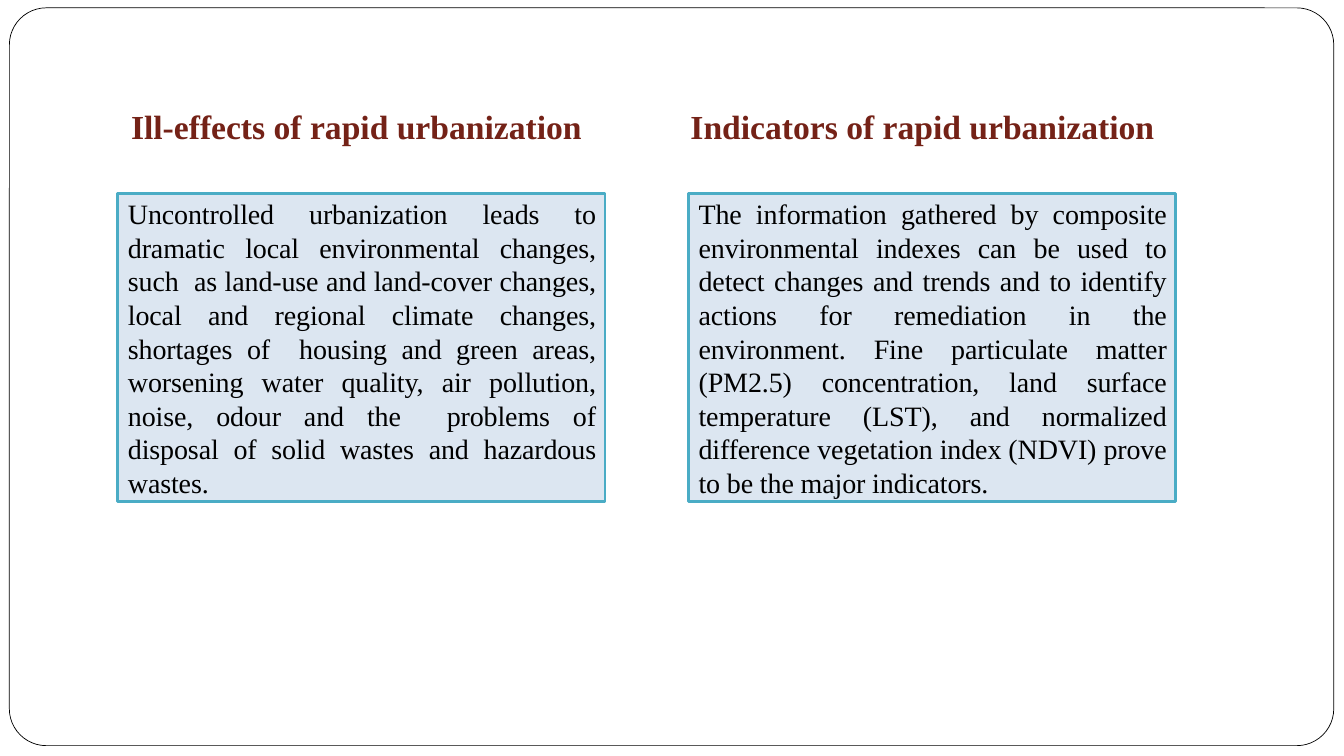
from lxml.etree import SubElement
from pptx import Presentation
from pptx.dml.color import RGBColor
from pptx.enum.shapes import MSO_SHAPE
from pptx.enum.text import MSO_ANCHOR, MSO_AUTO_SIZE, PP_ALIGN
from pptx.oxml.ns import qn
from pptx.util import Pt

COLORS = {
    "paper": "FFFFFF", "frame": "000000", "heading": "742217",
    "text": "000000", "panel": "DCE6F1", "border": "4AACC5",
}
COLORS = {part: RGBColor.from_string(value) for part, value in COLORS.items()}

HEADING = {"name": "Times New Roman", "size": Pt(24), "bold": True}
BODY = {"name": "Times New Roman", "size": Pt(20), "bold": False}
HEADING_FRAME = {"vertical_anchor": MSO_ANCHOR.TOP, "word_wrap": True,
                 "auto_size": MSO_AUTO_SIZE.NONE}
BODY_FRAME = HEADING_FRAME | {"margin_left": Pt(7.2), "margin_right": Pt(6.6),
                              "margin_top": Pt(2.2), "margin_bottom": Pt(0)}
BODY_PARAGRAPH = {"alignment": PP_ALIGN.JUSTIFY, "space_before": Pt(0),
                  "line_spacing": Pt(24)}

# heading placeholder, heading left, heading, body placeholder, body left, body
COLUMNS = [
    (1, 86.4, "Ill-effects of rapid urbanization", 2, 84.2,
     "Uncontrolled urbanization leads to dramatic local environmental changes, "
     "such  as land-use and land-cover changes, local and regional climate "
     "changes, shortages of  housing and green areas, worsening water quality, "
     "air pollution, noise, odour and the  problems of disposal of solid wastes "
     "and hazardous wastes."),
    (3, 486, "Indicators of rapid urbanization", 4, 491.8,
     "The information gathered by composite environmental indexes can be used "
     "to detect changes and trends and to identify actions for remediation in "
     "the environment. Fine particulate matter (PM2.5) concentration, land "
     "surface temperature (LST), and normalized difference vegetation index "
     "(NDVI) prove to be the major indicators."),
]


def set_all(target, values):
    for attribute, value in values.items():
        setattr(target, attribute, value)


def fill_placeholder(index, box, text, frame_format, font_format, color):
    """Place and format a placeholder; return it with its paragraph."""
    holder = slide.placeholders[index]
    holder.left, holder.top, holder.width, holder.height = map(Pt, box)
    set_all(holder.text_frame, frame_format)
    paragraph = holder.text_frame.paragraphs[0]
    run = paragraph.add_run()
    run.text = text
    set_all(run.font, font_format)
    run.font.color.rgb = COLORS[color]
    return holder, paragraph


prs = Presentation()
prs.slide_width, prs.slide_height = Pt(960), Pt(540)
slide = prs.slides.add_slide(prs.slide_layouts.get_by_name("Comparison"))
empty_title = slide.shapes.title.element
empty_title.getparent().remove(empty_title)

border = slide.shapes.add_shape(MSO_SHAPE.ROUNDED_RECTANGLE,
                                Pt(6.7), Pt(5.6), Pt(946), Pt(527))
border.adjustments[0] = 0.05
border.shadow.inherit = False
border.fill.solid()
border.fill.fore_color.rgb = COLORS["paper"]
border.line.color.rgb = COLORS["frame"]
border.line.width = Pt(0.5)
slide.shapes.element.insert(2, border.element)  # behind the text

for heading_index, heading_left, heading, body_index, body_left, body in COLUMNS:
    _, heading_line = fill_placeholder(heading_index, (heading_left, 72, 400, 36),
                                       heading, HEADING_FRAME, HEADING, "heading")
    heading_line.space_before = Pt(0)

    panel, prose = fill_placeholder(body_index, (body_left, 138.2, 348, 220.3),
                                    body, BODY_FRAME, BODY, "text")
    panel.fill.solid()
    panel.fill.fore_color.rgb = COLORS["panel"]
    panel.line.color.rgb = COLORS["border"]
    panel.line.width = Pt(2)

    properties = prose._p.get_or_add_pPr()
    properties.set("marL", "0")
    properties.set("indent", "0")
    SubElement(properties, qn("a:buNone"))
    set_all(prose, BODY_PARAGRAPH)
    prose.runs[0].font._element.set("spc", "-10")

prs.save("out.pptx")
